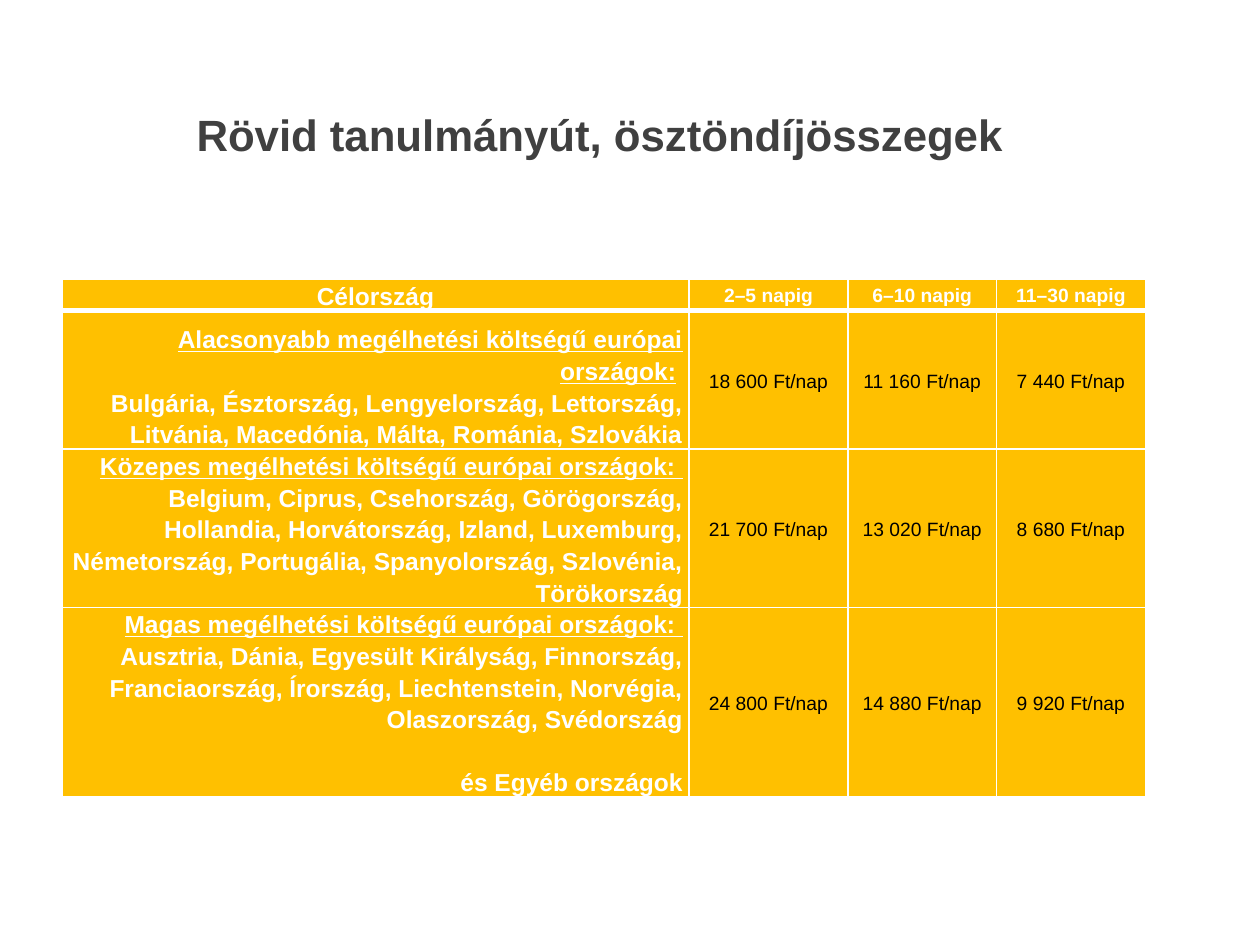
import pptx
import pptx.dml.color
import pptx.enum.text
import pptx.oxml
import pptx.oxml.ns
import pptx.util

COLORS = {"title": "404040", "gold": "FFC000", "white": "FFFFFF", "black": "000000"}
ALIGN = pptx.enum.text.PP_ALIGN
ANCHOR = pptx.enum.text.MSO_ANCHOR
FORMATS = {
    "title": {"size": 25, "bold": True, "color": "title"},
    "country": {"size": 14, "bold": True, "color": "white"},
    "duration": {"size": 11, "bold": True, "color": "white"},
    "amount": {"size": 11, "bold": False, "color": "black"},
}
TITLE = "Rövid tanulmányút, ösztöndíjösszegek"
DURATIONS = ["2–5 napig", "6–10 napig", "11–30 napig"]
GROUPS = [
    ("Alacsonyabb megélhetési költségű európai országok:", " ",
     "Bulgária, Észtország, Lengyelország, Lettország, Litvánia, Macedónia, Málta, "
     "Románia, Szlovákia", None, ["18 600", "11 160", "7 440"]),
    ("Közepes megélhetési költségű európai országok: ", "",
     "Belgium, Ciprus, Csehország, Görögország, Hollandia, Horvátország, Izland, "
     "Luxemburg, Németország, Portugália, Spanyolország, Szlovénia, Törökország",
     None, ["21 700", "13 020", "8 680"]),
    ("Magas megélhetési költségű európai országok: ", "",
     "Ausztria, Dánia, Egyesült Királyság, Finnország, Franciaország, Írország, "
     "Liechtenstein, Norvégia, Olaszország, Svédország",
     "és Egyéb országok", ["24 800", "14 880", "9 920"]),
]
COLUMNS = [4.98, 1.26, 1.18, 1.18]
ROWS = [0.24, 1.1, 1.25, 1.5]


class Deck:
    """Holds the slide style and builds each kind of element."""

    def __init__(self, width, height):
        self.show = pptx.Presentation()
        self.show.slide_width = pptx.util.Inches(width)
        self.show.slide_height = pptx.util.Inches(height)
        self.slide = self.show.slides.add_slide(self.show.slide_layouts[5])

    def area(self, left, top, width, height):
        across, down = self.show.slide_width, self.show.slide_height
        return [int(share * side) for share, side in
                zip((left, top, width, height), (across, down, across, down))]

    def words(self, paragraph, text, style, underline=False):
        run = paragraph.add_run()
        run.text = text
        form = FORMATS[style]
        values = {"name": "Arial", "size": pptx.util.Pt(form["size"]),
                  "bold": form["bold"], "underline": underline}
        for key, value in values.items():
            setattr(run.font, key, value)
        run.font.color.rgb = pptx.dml.color.RGBColor.from_string(COLORS[form["color"]])

    def title(self, text, *shares):
        heading = self.slide.shapes.title
        for key, value in zip(("left", "top", "width", "height"), self.area(*shares)):
            setattr(heading, key, value)
        frame = heading.text_frame
        frame.auto_size = pptx.enum.text.MSO_AUTO_SIZE.NONE
        frame.vertical_anchor = ANCHOR.TOP
        frame.paragraphs[0].alignment = ALIGN.LEFT
        self.words(frame.paragraphs[0], text, "title")

    def table(self, *shares):
        grid = self.slide.shapes.add_table(len(ROWS), len(COLUMNS), *self.area(*shares)).table
        for column, width in zip(grid.columns, COLUMNS):
            column.width = pptx.util.Inches(width)
        for row, height in zip(grid.rows, ROWS):
            row.height = pptx.util.Inches(height)
        for index, row in enumerate(grid.rows):
            for cell in row.cells:
                self.dress(cell, top=3 if index == 1 else 1, bottom=3 if index == 0 else 1)
        return grid

    def dress(self, cell, top, bottom):
        side = pptx.util.Inches(0.05)
        values = {"margin_left": side, "margin_right": side, "margin_top": 0,
                  "margin_bottom": 0, "vertical_anchor": ANCHOR.MIDDLE}
        for key, value in values.items():
            setattr(cell, key, value)
        cell.fill.solid()
        cell.fill.fore_color.rgb = pptx.dml.color.RGBColor.from_string(COLORS["gold"])
        edges = {"lnL": 1, "lnR": 1, "lnT": top, "lnB": bottom}
        for place, (tag, points) in enumerate(edges.items()):
            cell._tc.tcPr.insert(place, pptx.oxml.parse_xml(
                f'<a:{tag} {pptx.oxml.ns.nsdecls("a")} w="{pptx.util.Pt(points)}">'
                f'<a:solidFill><a:srgbClr val="{COLORS["white"]}"/></a:solidFill></a:{tag}>'))

    def line(self, paragraph, alignment):
        paragraph.alignment = alignment
        paragraph.line_spacing = 1.15
        return paragraph

    def label(self, cell, text, style):
        self.words(self.line(cell.text_frame.paragraphs[0], ALIGN.CENTER), text, style)

    def group(self, cell, heading, gap, countries, others):
        cell.vertical_anchor = ANCHOR.BOTTOM
        paragraph = self.line(cell.text_frame.paragraphs[0], ALIGN.RIGHT)
        self.words(paragraph, heading, "country", underline=True)
        if gap:
            self.words(paragraph, gap, "country")
        paragraph.add_line_break()
        self.words(paragraph, countries, "country")
        if others:
            extra = self.line(cell.text_frame.add_paragraph(), ALIGN.RIGHT)
            extra.space_before = pptx.util.Pt(18)
            self.words(extra, others, "country")


def main():
    deck = Deck(10, 7.5)
    deck.title(TITLE, 0.146, 0.107, 0.85, 0.08)
    grants = deck.table(0.049, 0.295, 0.86, 0.55)
    deck.label(grants.cell(0, 0), "Célország", "country")
    for column, duration in enumerate(DURATIONS, 1):
        deck.label(grants.cell(0, column), duration, "duration")
    for row, (heading, gap, countries, others, amounts) in enumerate(GROUPS, 1):
        deck.group(grants.cell(row, 0), heading, gap, countries, others)
        for column, amount in enumerate(amounts, 1):
            deck.label(grants.cell(row, column), f"{amount} Ft/nap", "amount")
    deck.show.save("out.pptx")


if __name__ == "__main__":
    main()
